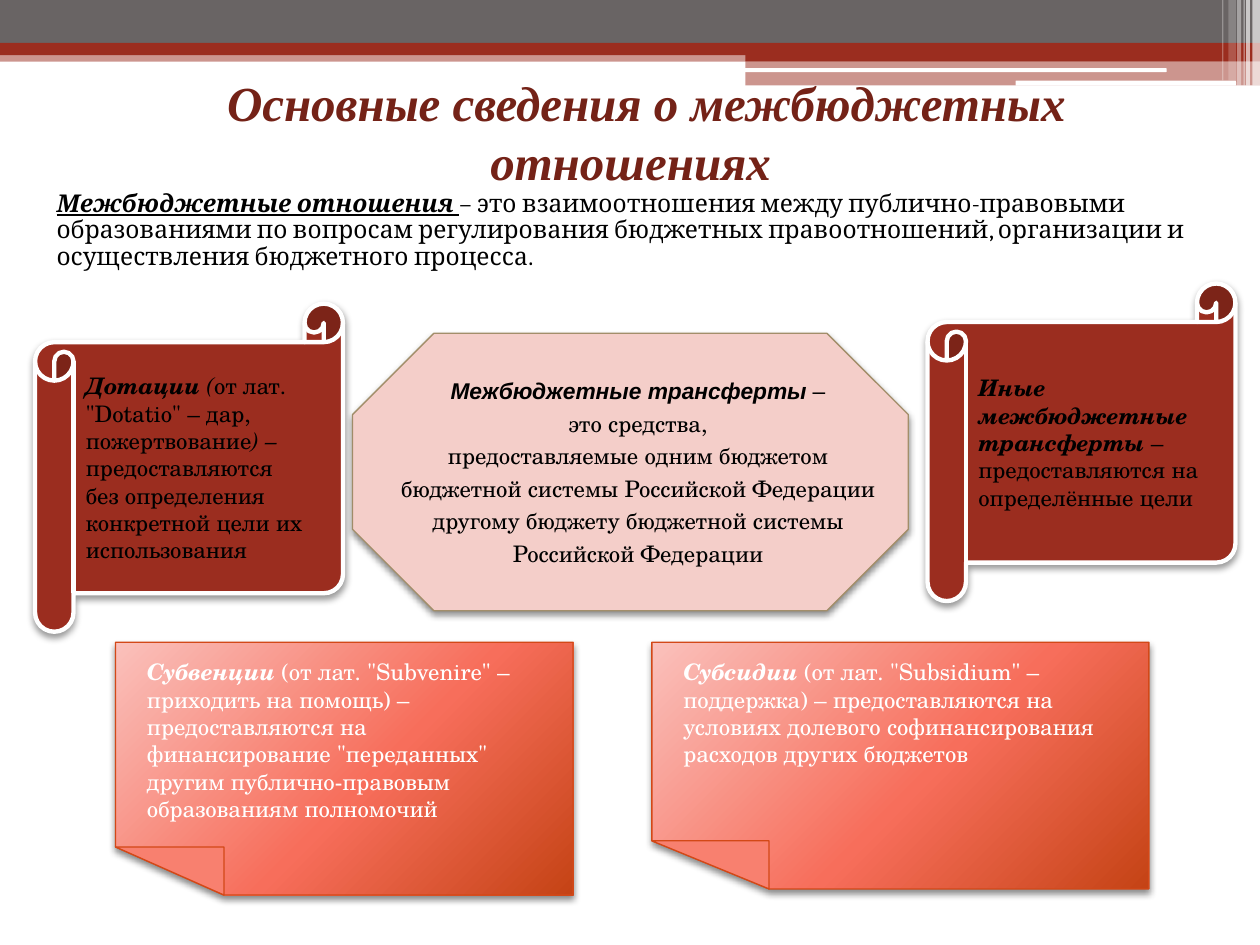
from lxml.etree import SubElement
from copy import deepcopy
from pptx import Presentation
from pptx.dml.color import RGBColor
from pptx.enum.shapes import MSO_SHAPE
from pptx.enum.text import MSO_ANCHOR, MSO_AUTO_SIZE, PP_ALIGN
from pptx.oxml.ns import qn
from pptx.util import Pt

RECT, ROUND = MSO_SHAPE.RECTANGLE, MSO_SHAPE.ROUNDED_RECTANGLE
SCROLL = MSO_SHAPE.HORIZONTAL_SCROLL
TOP, MIDDLE = MSO_ANCHOR.TOP, MSO_ANCHOR.MIDDLE
LEFT, CENTER = PP_ALIGN.LEFT, PP_ALIGN.CENTER
FIXED = MSO_AUTO_SIZE.NONE
SERIF = "TeX Gyre Schola"
RUST, GREY, WHITE, BLACK = "9B2D1F", "696464", "FFFFFF", "000000"
BLUSH = ((0, "FAC1BC"), (0.55, "F76E5B"), (1, "C54315"))

BANDS = (
    (RECT, 0, 28.8, 720, 6.5, RUST, 50),
    (RECT, 0, 0, 720, 24.5, GREY, 100),
    (RECT, 0, 24.5, 720, 7, RUST, 100),
    (RECT, 426, 28, 294, 7, RUST, 100),
    (RECT, 426, 34.6, 294, 14.2, RUST, 50),
    (ROUND, 425.5, 39, 241.2, 2.2, WHITE, 100),
    (ROUND, 580.3, 46.1, 126, 2.9, WHITE, 100),
    (RECT, 715.7, 0, 4.3, 49, WHITE, 65),
    (RECT, 712.1, 0, 2.2, 49, WHITE, 65),
    (RECT, 710.6, 0, 0.7, 49, WHITE, 60),
    (RECT, 707, 0, 2.2, 49, WHITE, 40),
    (RECT, 702, 0, 4.3, 46, WHITE, 20),
    (RECT, 698.4, 0, 0.7, 46, WHITE, 30),
)

LEAD = [("Межбюджетные отношения ", "biu"),
        ("– это взаимоотношения между публично-правовыми образованиями по "
         "вопросам регулирования бюджетных правоотношений, организации и "
         "осуществления бюджетного процесса.", "")]
CORE = [[("Межбюджетные трансферты", "bi"), (" –", "")]]
MORE = ("это средства,",
        "предоставляемые одним бюджетом",
        "бюджетной системы Российской Федерации",
        "другому бюджету бюджетной системы",
        "Российской Федерации")
SCROLLS = (
    ((20, 173.5, 176, 187.5),
     [("Дотации", "bi"), (" (", "i"),
      ("от лат. \"Dotatio\" – дар, пожертвование", ""), (") – ", "i"),
      ("предоставляются без определения конкретной цели их использования", "")]),
    ((530, 162, 176, 181.5),
     [("Иные межбюджетные трансферты", "bi"),
      (" – предоставляются на определённые цели", "")]),
)
NOTES = (
    ((66, 367, 261.5, 144.5), 62,
     [("Субвенции", "bi"),
      (" (от лат. \"Subvenire\" – приходить на помощь) – предоставляются на "
       "финансирование \"переданных\" другим публично-правовым образованиям "
       "полномочий", "")]),
    ((372.5, 367, 284, 141), 67,
     [("Субсидии", "bi"),
      (" (от лат. \"Subsidium\" – поддержка) – предоставляются на условиях "
       "долевого софинансирования расходов других бюджетов", "")]),
)


def hue(code):
    """Turn a hex string into a colour."""
    return RGBColor.from_string(code)


def paint(shape, fill, alpha=100, line=None, width=0.75):
    """Give a shape a solid fill and an optional outline."""
    shape.fill.solid()
    shape.fill.fore_color.rgb = hue(fill)
    if alpha < 100:
        tone = shape._element.spPr.find(".//" + qn("a:srgbClr"))
        SubElement(tone, qn("a:alpha"), val=str(alpha * 1000))
    edge(shape, line, width)


def edge(shape, line, width=0.75):
    """Set or clear the outline and drop the theme shadow."""
    if line:
        shape.line.color.rgb = hue(line)
        shape.line.width = Pt(width)
    else:
        shape.line.fill.background()
    shape.shadow.inherit = False


def blend(shape, stops):
    """Fill a shape with a diagonal three-stop gradient."""
    shape.fill.gradient()
    shape.fill.gradient_angle = 315
    first = shape._element.spPr.find(".//" + qn("a:gs"))
    first.addnext(deepcopy(first))
    for stop, (place, code) in zip(shape.fill.gradient_stops, stops):
        stop.color.rgb = hue(code)
        stop.position = place


def shade(shape, alpha=45):
    """Add a soft shadow that falls straight down."""
    effects = shape._element.spPr.find(qn("a:effectLst"))
    cast = SubElement(effects, qn("a:outerShdw"), blurRad=str(Pt(4)),
                      dist=str(Pt(2)), dir="5400000", rotWithShape="0")
    tone = SubElement(cast, qn("a:srgbClr"), val=BLACK)
    SubElement(tone, qn("a:alpha"), val=str(alpha * 1000))


def write(frame, paras, font=SERIF, size=13, color=BLACK, align=LEFT,
          anchor=MIDDLE, wrap=True, before=0, space=1.0, left=0, indent=0):
    """Fill a text frame with paragraphs of (text, style) runs."""
    frame.auto_size = FIXED
    frame.word_wrap = wrap
    frame.vertical_anchor = anchor
    for n, runs in enumerate(paras):
        para = frame.paragraphs[0] if n == 0 else frame.add_paragraph()
        para.alignment = align
        para.space_before = Pt(before)
        para.line_spacing = space
        props = para._p.get_or_add_pPr()
        props.set("marL", str(Pt(left)))
        props.set("indent", str(Pt(indent)))
        SubElement(props, qn("a:buNone"))
        for text, style in runs:
            run = para.add_run()
            run.text = text
            run.font.name = font
            run.font.size = Pt(size)
            run.font.color.rgb = hue(color)
            run.font.bold = "b" in style
            run.font.italic = "i" in style
            run.font.underline = "u" in style


def place(shape, *box):
    """Move a placeholder to a box and bring it to the front."""
    shape.left, shape.top, shape.width, shape.height = map(Pt, box)
    shape._element.getparent().append(shape._element)


def trace(shapes, points):
    """Draw a closed outline through points."""
    points = [(Pt(x), Pt(y)) for x, y in points]
    maker = shapes.build_freeform(*points[0], scale=1.0)
    maker.add_line_segments(points[1:], close=True)
    return maker.convert_to_shape()


def band(shapes, kind, x, y, w, h, fill, alpha):
    """Add one strip of the header."""
    paint(shapes.add_shape(kind, Pt(x), Pt(y), Pt(w), Pt(h)), fill, alpha)


def scroll(shapes, box, runs):
    """Add a scroll with text."""
    shape = shapes.add_shape(SCROLL, *map(Pt, box))
    paint(shape, RUST, line=WHITE, width=2.5)
    shade(shape, 40)
    write(shape.text_frame, [runs])


def note(shapes, box, fold, runs):
    """Add a note with a folded lower left corner."""
    x, y, w, h = box
    base, crease = y + h, y + h - 27.5
    sheet = trace(shapes, [(x, y), (x + w, y), (x + w, base),
                           (x + fold, base), (x, crease)])
    blend(sheet, BLUSH)
    edge(sheet, "D34817")
    shade(sheet)
    frame = sheet.text_frame
    frame.margin_left, frame.margin_right = Pt(18), Pt(26)
    frame.margin_top = Pt(9)
    write(frame, [runs], color=WHITE, anchor=TOP)
    flap = trace(shapes, [(x, crease), (x + fold, crease), (x + fold, base)])
    paint(flap, "F8806F", line="D34817")


def core(shape):
    """Shape the body placeholder as the central octagon."""
    place(shape, 201.5, 190.5, 317.5, 158.5)
    form = SubElement(shape._element.spPr, qn("a:prstGeom"), prst="octagon")
    guides = SubElement(form, qn("a:avLst"))
    SubElement(guides, qn("a:gd"), name="adj", fmla="val 29300")
    paint(shape, "F4CEC9", line="A28E6A")
    shade(shape)
    look = dict(align=CENTER, wrap=False, before=3, left=28.8, indent=-20.2)
    write(shape.text_frame, CORE + [[(text, "")] for text in MORE], **look)
    for run in shape.text_frame.paragraphs[0].runs:
        run.font.name = "Arial"


def main():
    """Build and save the slide."""
    deck = Presentation()
    deck.slide_width, deck.slide_height = Pt(720), Pt(540)
    slide = deck.slides.add_slide(deck.slide_layouts[1])
    shapes = slide.shapes
    title, body = slide.placeholders
    for row in BANDS:
        band(shapes, *row)
    place(title, 36.7, 46.5, 647.3, 57)
    write(title.text_frame, [[("Основные сведения о межбюджетных отношениях", "bi")]],
          font="Times New Roman", size=28, color="742217", align=CENTER, indent=18)
    core(body)
    lead = shapes.add_textbox(Pt(25.2), Pt(105.8), Pt(669), Pt(53.3))
    write(lead.text_frame, [LEAD], font="Cambria", size=14, anchor=TOP, space=0.9)
    for box, runs in SCROLLS:
        scroll(shapes, box, runs)
    for box, fold, runs in NOTES:
        note(shapes, box, fold, runs)
    deck.save("out.pptx")


if __name__ == "__main__":
    main()
